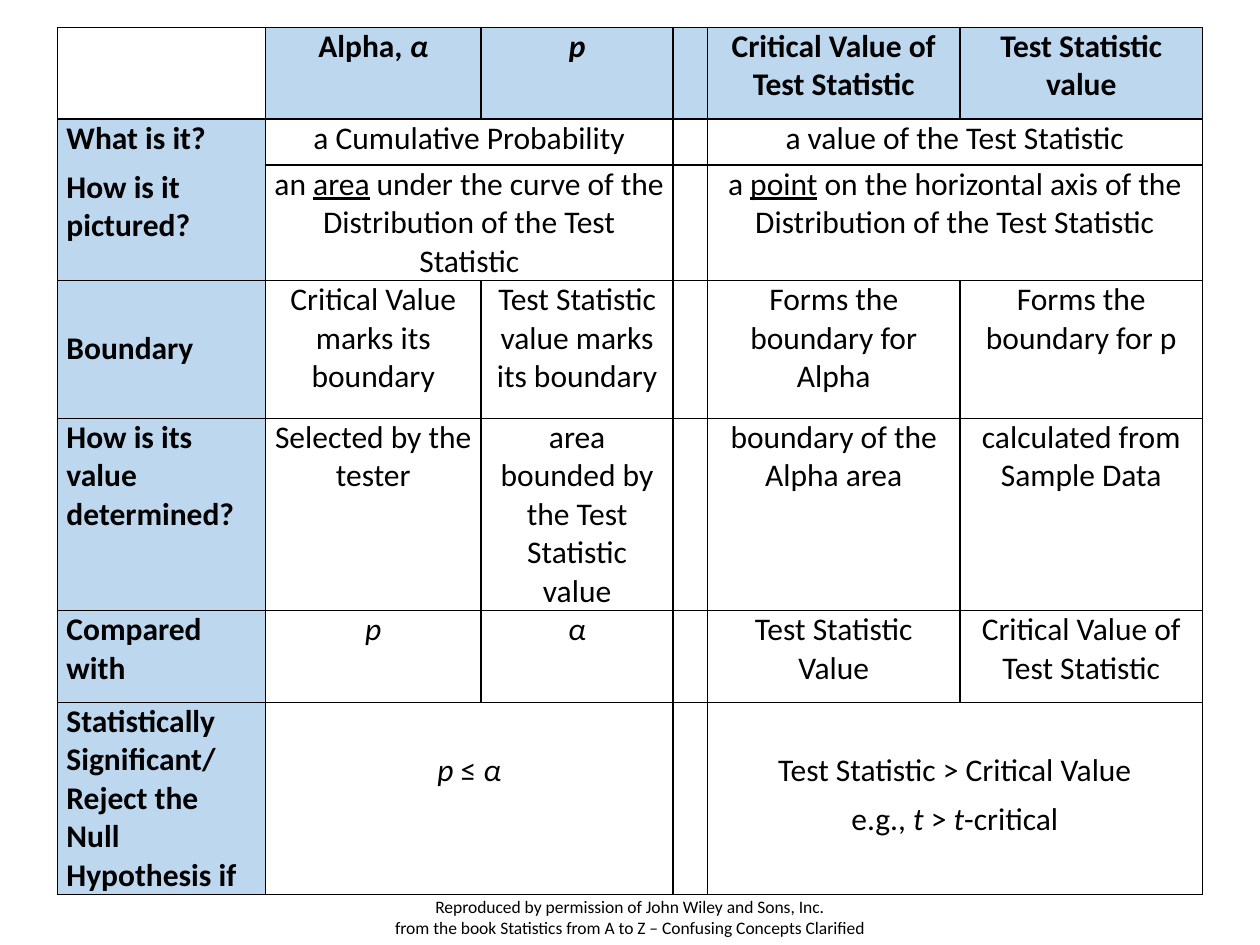
from collections import namedtuple
from lxml.etree import SubElement
from pptx import Presentation
from pptx.dml.color import RGBColor
from pptx.enum.text import MSO_AUTO_SIZE, PP_ALIGN
from pptx.oxml.ns import qn
from pptx.util import Cm, Pt

Theme = namedtuple("Theme", "font ink head body note gap line")
theme = Theme("Calibri", RGBColor(0, 0, 0), RGBColor(0xBD, 0xD7, 0xEE),
              Pt(18), Pt(10), Pt(3), Pt(1))


def write(frame, paras, size, bold=False, align=PP_ALIGN.CENTER, gap=Pt(0)):
    """Each paragraph is a list of (text, marks); marks may hold i and u."""
    frame.word_wrap = True
    for n, runs in enumerate(paras):
        par = frame.add_paragraph() if n else frame.paragraphs[0]
        par.alignment = align
        par.space_before = gap if n else Pt(0)
        par.space_after = gap
        for text, marks in runs:
            run = par.add_run()
            run.text = text
            font = run.font
            font.name, font.size, font.bold = theme.font, size, bold
            font.italic = "i" in marks
            font.underline = "u" in marks
            font.color.rgb = theme.ink


def edge(cell):
    """Draw a thin line on all four sides of a cell."""
    props = cell._tc.get_or_add_tcPr()
    for side in ("a:lnL", "a:lnR", "a:lnT", "a:lnB"):
        line = SubElement(props, qn(side), w=str(theme.line))
        fill = SubElement(line, qn("a:solidFill"))
        SubElement(fill, qn("a:srgbClr"), val=str(theme.ink))


deck = Presentation()
deck.slide_width, deck.slide_height = Cm(25.4), Cm(19.05)
slide = deck.slides.add_slide(deck.slide_layouts[6])

# Table grid
cols = [4.19, 4.35, 3.87, 0.69, 5.1, 4.88]
rows = [1.85, 0.93, 2.24, 2.78, 2.78, 1.85, 3.71]
frame = slide.shapes.add_table(len(rows), len(cols), Cm(1.16), Cm(0.55),
                               Cm(sum(cols)), Cm(sum(rows)))
table = frame.table
table.first_row = table.horz_banding = False
for col, wide in zip(table.columns, cols):
    col.width = Cm(wide)
for row, high in zip(table.rows, rows):
    row.height = Cm(high)
frame.height = Cm(17.32)

# Borders, margins and fills: shaded top row and left column
for r in range(len(rows)):
    for c in range(len(cols)):
        cell = table.cell(r, c)
        edge(cell)
        cell.margin_left = cell.margin_right = Cm(0.18)
        cell.margin_top = cell.margin_bottom = Cm(0)
        if (r == 0) != (c == 0):
            cell.fill.solid()
            cell.fill.fore_color.rgb = theme.head
        else:
            cell.fill.background()

# Merged cells
table.cell(1, 0).merge(table.cell(2, 0))
for r in (1, 2, 6):
    for c in (1, 4):
        table.cell(r, c).merge(table.cell(r, c + 1))

# Cell text: a string is one plain paragraph
words = {
    (0, 1): [[("Alpha, ", ""), ("α", "i")]],
    (0, 2): [[("p", "i")]],
    (0, 4): "Critical Value of Test Statistic",
    (0, 5): "Test Statistic value",
    (1, 0): [[("What is it?", "")], [("How is it pictured?", "")]],
    (1, 1): "a Cumulative Probability",
    (1, 4): "a value of the Test Statistic",
    (2, 1): [[("an ", ""), ("area", "u"),
              (" under the curve of the Distribution of the Test Statistic", "")]],
    (2, 4): [[("a ", ""), ("point", "u"),
              (" on the horizontal axis of the Distribution of the Test Statistic", "")]],
    (3, 0): "Boundary",
    (3, 1): "Critical Value marks its boundary",
    (3, 2): "Test Statistic value marks its boundary",
    (3, 4): "Forms the boundary for Alpha",
    (3, 5): "Forms the boundary for p",
    (4, 0): "How is its value determined?",
    (4, 1): "Selected by the tester",
    (4, 2): "area bounded by the Test Statistic value",
    (4, 4): "boundary of the Alpha area",
    (4, 5): "calculated from Sample Data",
    (5, 0): "Compared with",
    (5, 1): [[("p", "i")]],
    (5, 2): [[("α", "i")]],
    (5, 4): "Test Statistic Value",
    (5, 5): "Critical Value of Test Statistic",
    (6, 0): "Statistically Significant/ Reject the Null Hypothesis if",
    (6, 1): [[("p", "i"), (" ≤ ", ""), ("α", "i")]],
    (6, 4): [[("Test Statistic > Critical Value", "")],
             [("e.g., ", ""), ("t", "i"), (" > ", ""), ("t", "i"), ("-critical", "")]],
}
for (r, c), text in words.items():
    paras = [[(text, "")]] if isinstance(text, str) else text
    align = PP_ALIGN.CENTER if c else PP_ALIGN.LEFT
    write(table.cell(r, c).text_frame, paras, theme.body,
          r == 0 or c == 0, align, theme.gap)

# Cells whose text starts one line lower
for spot in ((3, 0), (6, 1), (6, 4)):
    table.cell(*spot).margin_top = Cm(0.99)

# Credit line
note = slide.shapes.add_textbox(Cm(5.94), Cm(17.93), Cm(13.51), Cm(1.12))
write(note.text_frame, [
    [("Reproduced by permission of John Wiley and Sons, Inc.", "")],
    [("from the book Statistics from A to Z – Confusing Concepts Clarified", "")],
], theme.note)
note.text_frame.auto_size = MSO_AUTO_SIZE.SHAPE_TO_FIT_TEXT

deck.save("out.pptx")
